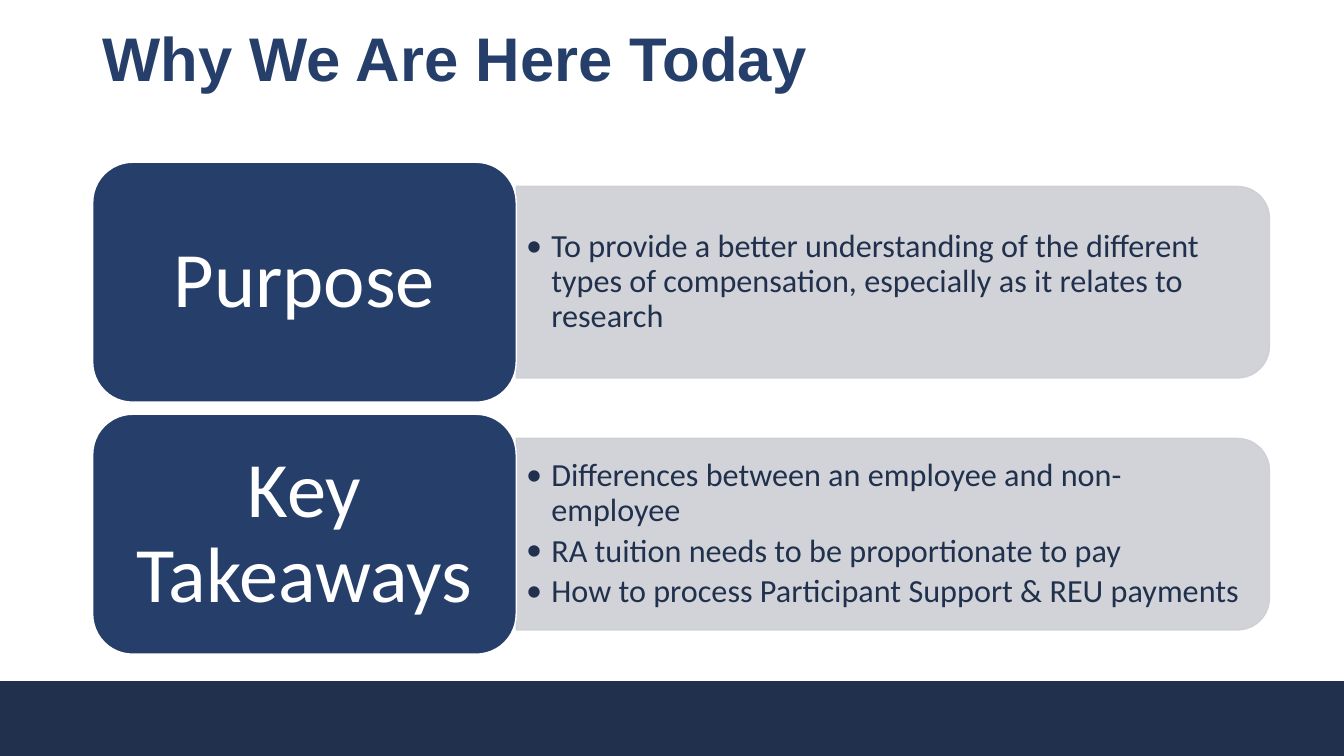
from lxml import etree
from pptx import Presentation
from pptx.dml.color import RGBColor
from pptx.enum import shapes, text
from pptx.oxml.ns import qn
from pptx.util import Inches, Pt

NAVY, BLUE, GREY, WHITE = "21314D", "263F6A", "CDCFD4", "FFFFFF"
PRESET = shapes.MSO_SHAPE
ROWS = [
    ("Purpose", [
        "To provide a better understanding of the different types of "
        "compensation, especially as it relates to research"]),
    ("Key Takeaways", [
        "Differences between an employee and non-employee",
        "RA tuition needs to be proportionate to pay",
        "How to process Participant Support & REU payments"]),
]


def color(code):
    return RGBColor.from_string(code)


def add_block(slide, kind, box, fill, edge):
    block = slide.shapes.add_shape(kind, *map(Inches, box))
    block.shadow.inherit = False
    block.fill.solid()
    block.fill.fore_color.rgb = color(fill)
    block.line.color.rgb = color(edge)
    block.line.width = Pt(1)
    return block


def fade(block, percent):
    """Set the opacity of the fill and the line."""
    for tone in block._element.spPr.iter(qn("a:srgbClr")):
        etree.SubElement(tone, qn("a:alpha"), val=str(percent * 1000))


def add_bullet(para):
    props = para._p.get_or_add_pPr()
    props.set("marL", str(Inches(0.25)))
    props.set("indent", str(-Inches(0.25)))
    etree.SubElement(props, qn("a:buFont"), typeface="Calibri")
    etree.SubElement(props, qn("a:buChar"), char="•")


def add_text(slide, box, lines, size, tint, face="Calibri", bold=False,
             align=text.PP_ALIGN.LEFT, anchor=text.MSO_ANCHOR.MIDDLE,
             inset=(0.1, 0.05), bullets=False):
    frame = slide.shapes.add_textbox(*map(Inches, box)).text_frame
    frame.word_wrap = True
    frame.vertical_anchor = anchor
    frame.margin_left = frame.margin_right = Inches(inset[0])
    frame.margin_top = frame.margin_bottom = Inches(inset[1])
    for i, line in enumerate(lines):
        para = frame.add_paragraph() if i else frame.paragraphs[0]
        para.alignment = align
        para.line_spacing = 0.9
        if bullets:
            para.space_after = Pt(4)
            add_bullet(para)
        run = para.add_run()
        run.text = line
        run.font.size = Pt(size)
        run.font.name = face
        run.font.bold = bold
        run.font.color.rgb = color(tint)


def add_bar(slide, box, points):
    """Grey bar, rounded on its right side, with bulleted text."""
    left, top, width, height = box
    shift = (width - height) / 2
    bar = add_block(slide, PRESET.ROUND_2_SAME_RECTANGLE,
                    (left + shift, top - shift, height, width), GREY, GREY)
    bar.rotation = 90
    fade(bar, 90)
    add_text(slide, (left, top + 0.09, width - 0.1, height - 0.18), points,
             23, NAVY, bullets=True)


def add_label(slide, box, name):
    left, top, width, height = box
    add_block(slide, PRESET.ROUNDED_RECTANGLE, box, BLUE, WHITE)
    pad = 0.115
    add_text(slide, (left + pad, top + pad, width - 2 * pad, height - 2 * pad),
             [name], 56, WHITE, align=text.PP_ALIGN.CENTER, inset=(0.23, 0.12))


def add_row(slide, box, name, points):
    left, top, width, height = box
    label, gap = 4.2, 0.24
    add_bar(slide, (left + label, top + gap, width - label, height - 2 * gap),
            points)
    add_label(slide, (left, top, label, height), name)


def add_rows(slide, box):
    left, top, width, height = box
    gap = 0.12
    tall = (height - gap * (len(ROWS) - 1)) / len(ROWS)
    for i, (name, points) in enumerate(ROWS):
        add_row(slide, (left, top + i * (tall + gap), width, tall), name, points)


def main():
    deck = Presentation()
    deck.slide_width, deck.slide_height = Inches(13.33), Inches(7.5)
    slide = deck.slides.add_slide(deck.slide_layouts[6])
    add_block(slide, PRESET.RECTANGLE, (0, 6.76, 13.33, 0.73), NAVY, NAVY)
    add_text(slide, (0.92, 0.19, 11.5, 0.8), ["Why We Are Here Today"], 44,
             BLUE, face="Arial", bold=True, anchor=text.MSO_ANCHOR.BOTTOM)
    add_rows(slide, (0.92, 1.61, 11.67, 4.88))
    deck.save("out.pptx")


if __name__ == "__main__":
    main()
